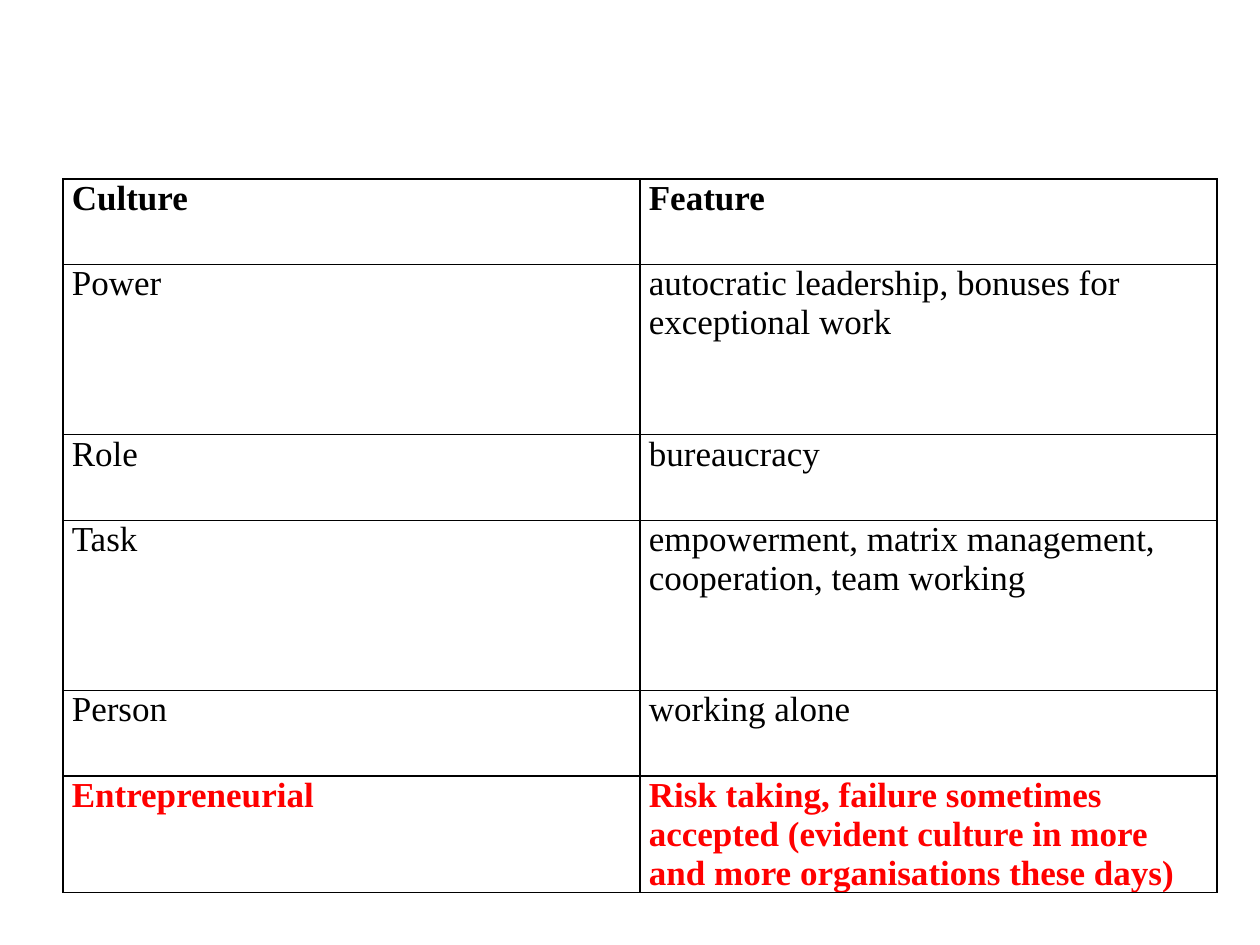
from typing import NamedTuple

from lxml.etree import SubElement
from pptx import Presentation
from pptx.dml.color import RGBColor
from pptx.oxml import parse_xml
from pptx.oxml.ns import nsdecls, qn
from pptx.table import _Cell as Cell
from pptx.util import Inches, Pt

BLACK = RGBColor(0x00, 0x00, 0x00)
RED = RGBColor(0xFF, 0x00, 0x00)
FONT = "Times New Roman"
SHORT, TALL = 0.68, 1.35
COL_WIDTH = 4.58


class CultureRow(NamedTuple):
    culture: str
    feature: str
    height: float = SHORT
    bold: bool = False
    color: RGBColor = BLACK


ROWS = [
    CultureRow("Culture", "Feature", bold=True),
    CultureRow("Power", "autocratic leadership, bonuses for exceptional work", TALL),
    CultureRow("Role", "bureaucracy"),
    CultureRow("Task", "empowerment, matrix management, cooperation, team working", TALL),
    CultureRow("Person", "working alone"),
    CultureRow(
        "Entrepreneurial",
        "Risk taking, failure sometimes accepted "
        "(evident culture in more and more organisations these days)",
        bold=True,
        color=RED,
    ),
]


def add_borders(cell: Cell) -> None:
    """Draw a thin black line on all four sides; lines precede the fill."""
    tc_pr = cell._tc.get_or_add_tcPr()
    for i, side in enumerate(("lnL", "lnR", "lnT", "lnB")):
        ln = parse_xml(f'<a:{side} {nsdecls("a")} w="{Pt(1)}"/>')
        fill = SubElement(ln, qn("a:solidFill"))
        SubElement(fill, qn("a:srgbClr"), val=str(BLACK))
        tc_pr.insert(i, ln)


def fill_cell(cell: Cell, text: str, row: CultureRow) -> None:
    cell.margin_left = cell.margin_right = Inches(0.07)
    cell.margin_top = cell.margin_bottom = 0
    cell.fill.background()
    add_borders(cell)
    p = cell.text_frame.paragraphs[0]
    p.space_after = Pt(6)
    r = p.add_run()
    r.text = text
    r.font.name = FONT
    r.font.size = Pt(20)
    r.font.bold = row.bold
    r.font.color.rgb = row.color


def main() -> None:
    prs = Presentation()
    prs.slide_width, prs.slide_height = Inches(10), Inches(7.5)
    s = prs.slides.add_slide(prs.slide_layouts[6])

    # Table of cultures and their features
    height = sum(row.height for row in ROWS)
    table = s.shapes.add_table(
        len(ROWS), 2, Inches(0.5), Inches(1.42), Inches(2 * COL_WIDTH), Inches(height)
    ).table
    table.first_row = table.horz_banding = False
    for col in table.columns:
        col.width = Inches(COL_WIDTH)
    for i, row in enumerate(ROWS):
        table.rows[i].height = Inches(row.height)
        for j, text in enumerate((row.culture, row.feature)):
            fill_cell(table.cell(i, j), text, row)

    prs.save("out.pptx")


if __name__ == "__main__":
    main()
